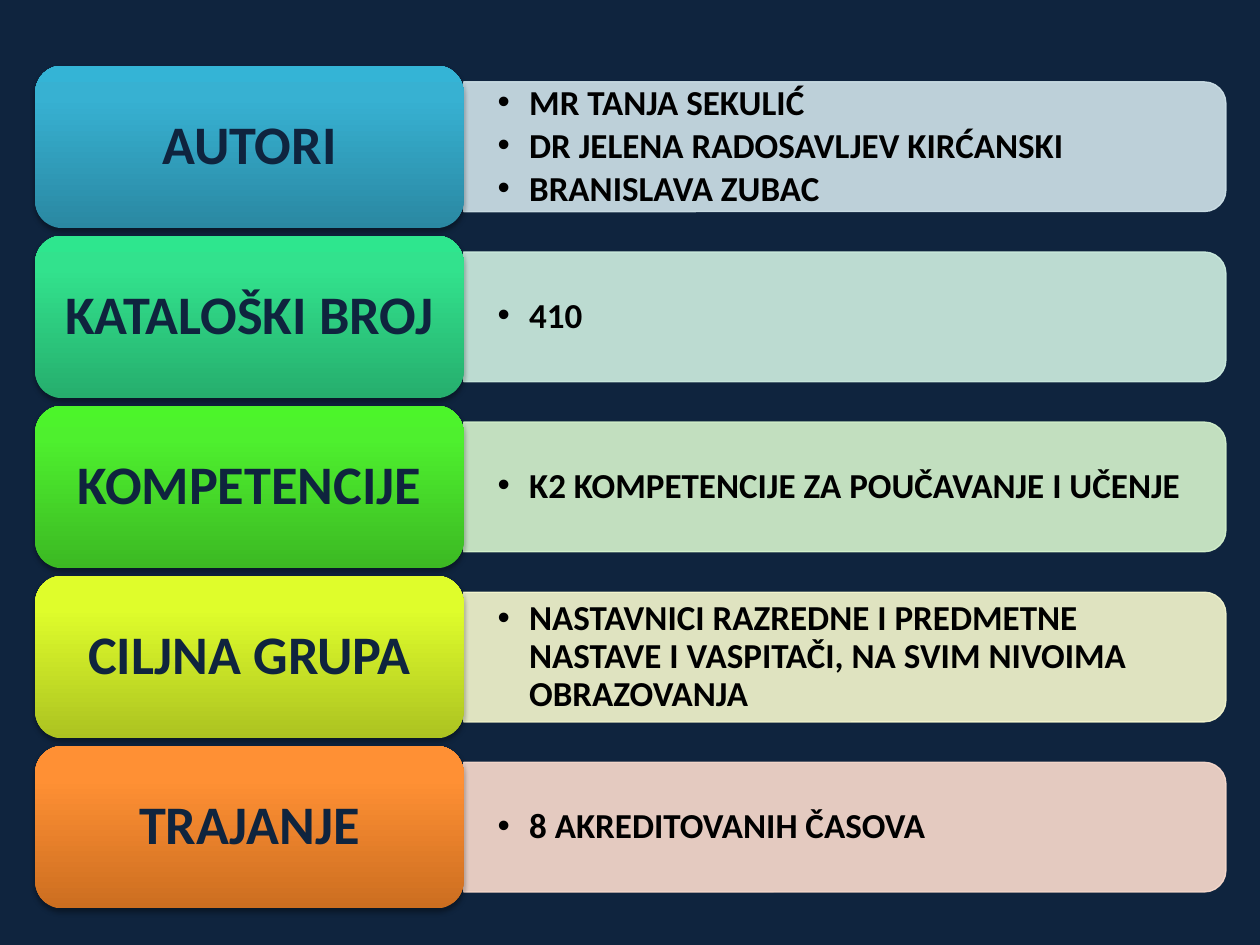
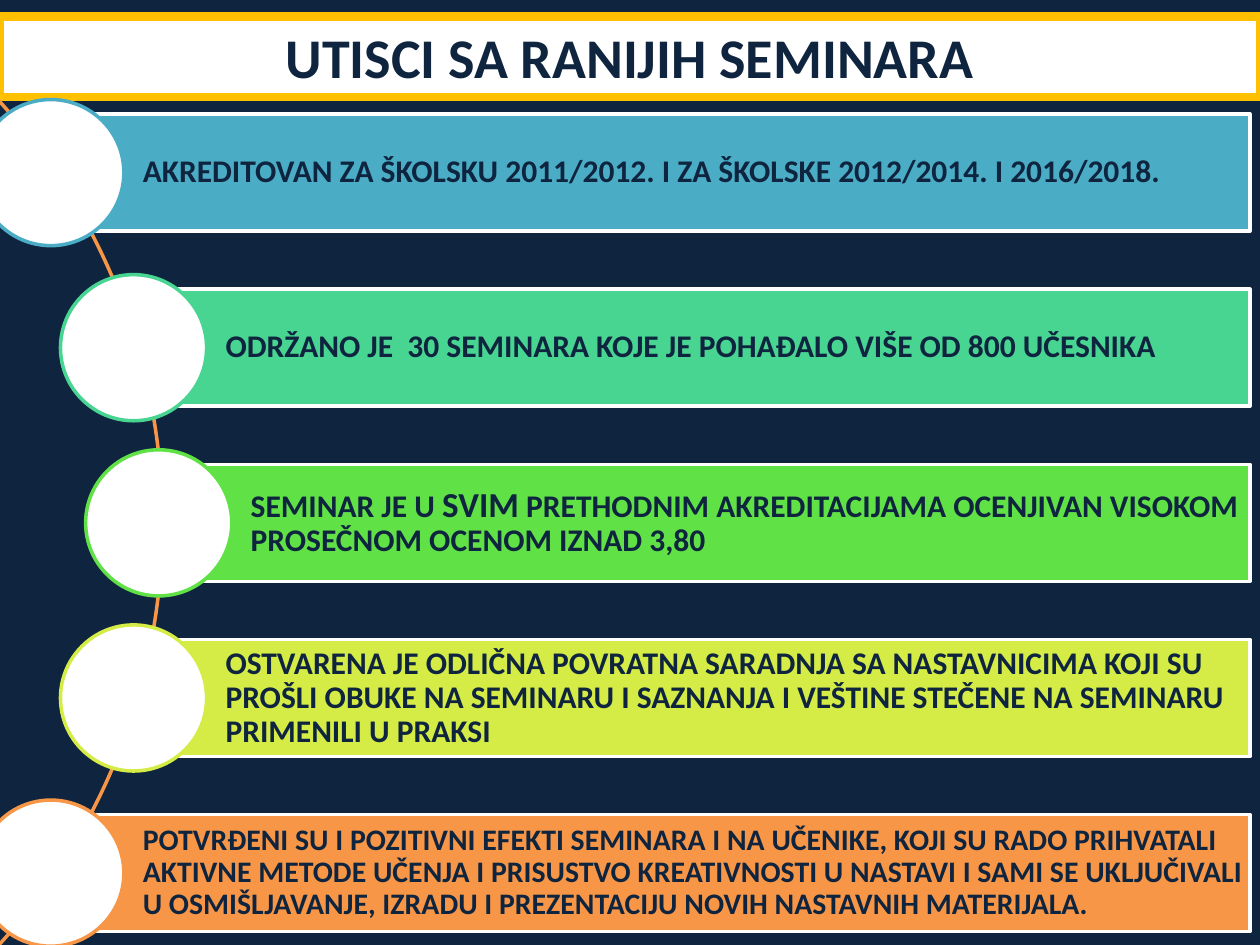
from math import sqrt

from lxml.etree import SubElement
from pptx import Presentation
from pptx.dml.color import RGBColor
from pptx.enum.shapes import MSO_SHAPE
from pptx.enum.text import MSO_ANCHOR, MSO_AUTO_SIZE, PP_ALIGN
from pptx.oxml.ns import qn
from pptx.util import Inches, Pt

NAVY = RGBColor(0x0F, 0x24, 0x3E)
WHITE = RGBColor(0xFF, 0xFF, 0xFF)
BLACK = RGBColor(0x00, 0x00, 0x00)
GOLD = RGBColor(0xFF, 0xC0, 0x00)
BLUE = RGBColor(0x4B, 0xAC, 0xC6)
MINT = RGBColor(0x48, 0xD4, 0x91)
GREEN = RGBColor(0x60, 0xE1, 0x46)
LIME = RGBColor(0xD5, 0xEC, 0x46)
ORANGE = RGBColor(0xF7, 0x96, 0x46)
PALE_BLUE = RGBColor(0xD0, 0xE3, 0xEA)
PALE_MINT = RGBColor(0xCF, 0xEF, 0xE1)
PALE_GREEN = RGBColor(0xD6, 0xF4, 0xCE)
PALE_LIME = RGBColor(0xF6, 0xF8, 0xCF)
PALE_ORANGE = RGBColor(0xFC, 0xDD, 0xCF)

FONT = "Calibri"
WIDTH, HEIGHT = 10, 7.5

# label, details, label gradient from bottom to top, panel colour
SEMINAR_FACTS = [
    ("AUTORI",
     ["MR TANJA SEKULIĆ", "DR JELENA RADOSAVLJEV KIRĆANSKI", "BRANISLAVA ZUBAC"],
     ("2A88A2", "37B1D2", "34B4D6"), PALE_BLUE),
    ("KATALOŠKI BROJ", ["410"],
     ("26AE6D", "32E28D", "2EE68E"), PALE_MINT),
    ("KOMPETENCIJE", ["K2 KOMPETENCIJE ZA POUČAVANJE I UČENJE"],
     ("3CB923", "4EF02E", "4CF52A"), PALE_GREEN),
    ("CILJNA GRUPA",
     ["NASTAVNICI RAZREDNE I PREDMETNE NASTAVE I VASPITAČI, "
      "NA SVIM NIVOIMA OBRAZOVANJA"],
     ("ACC321", "DFFD2B", "E1FF2B"), PALE_LIME),
    ("TRAJANJE", ["8 AKREDITOVANIH ČASOVA"],
     ("CC6E20", "FF9034", "FF9136"), PALE_ORANGE),
]

IMPRESSIONS_TITLE = "UTISCI SA RANIJIH SEMINARA"
# runs of (text, size), colour
IMPRESSIONS = [
    ([("AKREDITOVAN ZA ŠKOLSKU 2011/2012. I ZA ŠKOLSKE 2012/2014. I 2016/2018.", 18)],
     BLUE),
    ([("ODRŽANO JE  30 SEMINARA KOJE JE POHAĐALO VIŠE OD 800 UČESNIKA", 18)], MINT),
    ([("SEMINAR JE U ", 18), ("SVIM", 20),
      (" PRETHODNIM AKREDITACIJAMA OCENJIVAN VISOKOM PROSEČNOM OCENOM IZNAD 3,80", 18)],
     GREEN),
    ([("OSTVARENA JE ODLIČNA POVRATNA SARADNJA SA NASTAVNICIMA KOJI SU PROŠLI OBUKE "
       "NA SEMINARU I SAZNANJA I VEŠTINE STEČENE NA SEMINARU PRIMENILI U PRAKSI", 18)],
     LIME),
    ([("POTVRĐENI SU I POZITIVNI EFEKTI SEMINARA I NA UČENIKE, KOJI SU RADO PRIHVATALI "
       "AKTIVNE METODE UČENJA I PRISUSTVO KREATIVNOSTI U NASTAVI I SAMI SE UKLJUČIVALI "
       "U OSMIŠLJAVANJE, IZRADU I PREZENTACIJU NOVIH NASTAVNIH MATERIJALA.", 17)],
     ORANGE),
]

LABEL = dict(left=0.28, top=0.52, width=3.4, height=1.29, pitch=1.35)
PANEL = dict(width=6.05, height=1.03, text_width=6, text_height=0.93)
ARC = dict(center_x=-3.68, center_y=4.15, radius=4.97, node_radius=4.94)
BAR = dict(right=9.92, height=0.93, pitch=1.39)
NODE_SIZE = 1.16


def add_slide(deck):
    slide = deck.slides.add_slide(deck.slide_layouts[6])
    slide.background.fill.solid()
    slide.background.fill.fore_color.rgb = NAVY
    return slide


def add_box(slide, kind, box, fill=None, line=None, line_width=2):
    shape = slide.shapes.add_shape(kind, *map(Inches, box))
    shape.shadow.inherit = False
    if fill is None:
        shape.fill.background()
    else:
        shape.fill.solid()
        shape.fill.fore_color.rgb = fill
    if line is None:
        shape.line.fill.background()
    else:
        shape.line.color.rgb = line
        shape.line.width = Pt(line_width)
    return shape


def set_frame(shape, margins, **settings):
    """Margins are left, top, right, bottom in inches."""
    frame = shape.text_frame
    values = dict(word_wrap=True, vertical_anchor=MSO_ANCHOR.MIDDLE)
    values.update(zip(("margin_left", "margin_top", "margin_right", "margin_bottom"),
                      map(Inches, margins)))
    values.update(settings)
    for name, value in values.items():
        setattr(frame, name, value)
    return frame


def write(paragraph, runs, color=NAVY, **layout):
    for name, value in layout.items():
        setattr(paragraph, name, value)
    for text, size in runs:
        run = paragraph.add_run()
        run.text = text
        run.font.color.rgb = color
        for name, value in dict(name=FONT, size=Pt(size), bold=True).items():
            setattr(run.font, name, value)


def make_translucent(shape, percent):
    for color in shape.element.spPr.iter(qn("a:srgbClr")):
        SubElement(color, qn("a:alpha"), val=str(percent * 1000))


def shade_label(shape, colors):
    """Gradient rising from the bottom edge, with a soft shadow below."""
    shape.fill.gradient()
    shape.fill.gradient_angle = 90
    properties = shape.element.spPr
    stops = next(properties.iter(qn("a:gsLst")))
    for stop in list(stops):
        stops.remove(stop)
    for position, color in zip((0, 80, 100), colors):
        stop = SubElement(stops, qn("a:gs"), pos=str(position * 1000))
        SubElement(stop, qn("a:srgbClr"), val=color)
    shadow = SubElement(properties.find(qn("a:effectLst")), qn("a:outerShdw"),
                        blurRad=str(Pt(3.1)), dist=str(Pt(1.8)),
                        dir="5400000", rotWithShape="0")
    tint = SubElement(shadow, qn("a:srgbClr"), val="000000")
    SubElement(tint, qn("a:alpha"), val="35000")


def add_bullet(paragraph):
    properties = paragraph._p.get_or_add_pPr()
    properties.set("marL", str(Inches(0.25)))
    properties.set("indent", str(-Inches(0.25)))
    SubElement(properties, qn("a:buFont"), typeface="Arial")
    SubElement(properties, qn("a:buChar"), char="•")


def add_fact(slide, row, label, details, gradient, panel_color):
    top = LABEL["top"] + row * LABEL["pitch"]
    middle = top + LABEL["height"] / 2
    panel_left = LABEL["left"] + LABEL["width"]

    # The panel is drawn upright, then turned so its round corners face right.
    panel = add_box(slide, MSO_SHAPE.ROUND_2_SAME_RECTANGLE,
                    (panel_left + (PANEL["width"] - PANEL["height"]) / 2,
                     middle - PANEL["width"] / 2, PANEL["height"], PANEL["width"]),
                    panel_color, panel_color, 0.75)
    panel.rotation = 90
    make_translucent(panel, 90)

    details_box = slide.shapes.add_textbox(*map(Inches, (
        panel_left, middle - PANEL["text_height"] / 2,
        PANEL["text_width"], PANEL["text_height"])))
    frame = set_frame(details_box, (0.27, 0.14, 0.27, 0.14))
    for index, detail in enumerate(details):
        paragraph = frame.add_paragraph() if index else frame.paragraphs[0]
        add_bullet(paragraph)
        write(paragraph, [(detail, 20)], BLACK,
              level=1, line_spacing=0.9, space_after=Pt(3))

    label_box = add_box(slide, MSO_SHAPE.ROUNDED_RECTANGLE,
                        (LABEL["left"], top, LABEL["width"], LABEL["height"]))
    shade_label(label_box, gradient)
    frame = set_frame(label_box, (0.13, 0.06, 0.13, 0.06))
    write(frame.paragraphs[0], [(label, 31)],
          alignment=PP_ALIGN.CENTER, line_spacing=0.9)


def add_title(slide, title):
    band = add_box(slide, MSO_SHAPE.RECTANGLE, (0, 0.13, WIDTH, 0.64), WHITE, GOLD, 5)
    frame = set_frame(band, (0.1, 0.05, 0.1, 0.05), vertical_anchor=MSO_ANCHOR.TOP,
                      auto_size=MSO_AUTO_SIZE.SHAPE_TO_FIT_TEXT)
    write(frame.paragraphs[0], [(title, 32)], alignment=PP_ALIGN.CENTER)


def add_arc(slide):
    radius = ARC["radius"]
    arc = add_box(slide, MSO_SHAPE.BLOCK_ARC,
                  (ARC["center_x"] - radius, ARC["center_y"] - radius,
                   2 * radius, 2 * radius), line=ORANGE)
    for index, value in enumerate((189, 27, 0)):
        arc.adjustments[index] = value


def add_impression(slide, row, runs, color):
    """A bar that starts at the centre of its node, which sits on the arc."""
    drop = (row - (len(IMPRESSIONS) - 1) / 2) * BAR["pitch"]
    middle = ARC["center_y"] + drop
    left = ARC["center_x"] + sqrt(ARC["node_radius"] ** 2 - drop ** 2)
    bar = add_box(slide, MSO_SHAPE.RECTANGLE,
                  (left, middle - BAR["height"] / 2, BAR["right"] - left, BAR["height"]),
                  color, WHITE)
    frame = set_frame(bar, (0.73, 0.05, 0.05, 0.05))
    write(frame.paragraphs[0], runs, alignment=PP_ALIGN.LEFT, line_spacing=0.9)
    add_box(slide, MSO_SHAPE.OVAL,
            (left - NODE_SIZE / 2, middle - NODE_SIZE / 2, NODE_SIZE, NODE_SIZE),
            WHITE, color)


def main():
    deck = Presentation()
    deck.slide_width, deck.slide_height = Inches(WIDTH), Inches(HEIGHT)

    facts_slide = add_slide(deck)
    for row, fact in enumerate(SEMINAR_FACTS):
        add_fact(facts_slide, row, *fact)

    impressions_slide = add_slide(deck)
    add_title(impressions_slide, IMPRESSIONS_TITLE)
    add_arc(impressions_slide)
    for row, impression in enumerate(IMPRESSIONS):
        add_impression(impressions_slide, row, *impression)

    deck.save("out.pptx")


if __name__ == "__main__":
    main()
